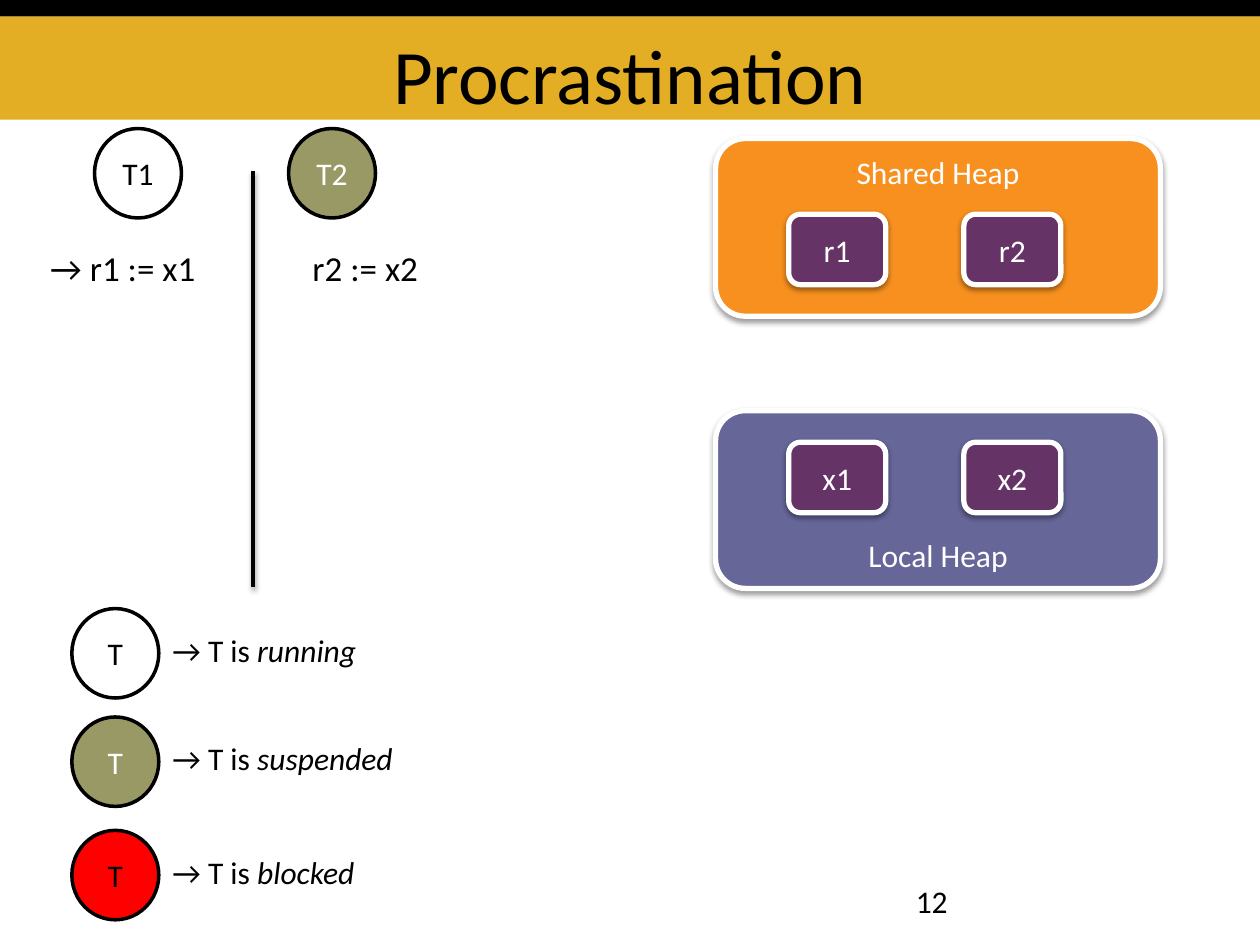
from lxml.etree import SubElement
from pptx import Presentation
from pptx.dml.color import RGBColor
from pptx.enum.shapes import MSO_CONNECTOR as Connector, MSO_SHAPE as Shape
from pptx.enum.text import MSO_ANCHOR as Anchor, PP_ALIGN as Align
from pptx.oxml.ns import qn
from pptx.util import Inches, Pt

BLACK = RGBColor(0x00, 0x00, 0x00)
WHITE = RGBColor(0xFF, 0xFF, 0xFF)
GOLD = RGBColor(0xE3, 0xAE, 0x24)
ORANGE = RGBColor(0xF7, 0x90, 0x1E)
SLATE = RGBColor(0x66, 0x66, 0x99)
PLUM = RGBColor(0x66, 0x33, 0x66)
OLIVE = RGBColor(0x99, 0x99, 0x66)
RED = RGBColor(0xFF, 0x00, 0x00)


class HeapSlide:
    font = "Calibri"
    size = 18

    def __init__(self, deck):
        self.page = deck.slides.add_slide(deck.slide_layouts[6])

    def set_effects(self, shape, shadow):
        """Replace the theme shadow; call after fill and line are set."""
        effects = SubElement(shape._element.spPr, qn("a:effectLst"))
        if shadow:
            outer = SubElement(effects, qn("a:outerShdw"), blurRad=str(Pt(3.1)),
                               dist=str(Pt(1.6)), dir="5400000", rotWithShape="0")
            color = SubElement(outer, qn("a:srgbClr"), val=str(BLACK))
            SubElement(color, qn("a:alpha"), val="38000")

    def set_text(self, shape, spans, color, size=None, align=Align.CENTER, anchor=Anchor.MIDDLE):
        """Fill the shape with (text, italic) spans as one paragraph."""
        frame = shape.text_frame
        frame.word_wrap = True
        frame.vertical_anchor = anchor
        para = frame.paragraphs[0]
        para.alignment = align
        for text, italic in spans:
            span = para.add_run()
            span.text = text
            span.font.name = self.font
            span.font.size = Pt(size or self.size)
            span.font.color.rgb = color
            if italic:
                span.font.italic = True

    def shape(self, kind, left, top, width, height, fill, line=None, weight=0, shadow=False):
        shape = self.page.shapes.add_shape(
            kind, Inches(left), Inches(top), Inches(width), Inches(height))
        shape.fill.solid()
        shape.fill.fore_color.rgb = fill
        if line is None:
            shape.line.fill.background()
        else:
            shape.line.color.rgb = line
            shape.line.width = Pt(weight)
        self.set_effects(shape, shadow)
        return shape

    def band(self, top, height, fill):
        self.shape(Shape.RECTANGLE, 0, top, 10, height, fill)

    def heap(self, top, name, fill, anchor):
        heap = self.shape(Shape.ROUNDED_RECTANGLE, 5.68, top, 3.53, 1.41, fill, WHITE, 3, True)
        self.set_text(heap, [(name, False)], WHITE, anchor=anchor)

    def cell(self, left, top, name):
        cell = self.shape(Shape.ROUNDED_RECTANGLE, left, top, 0.77, 0.56, PLUM, WHITE, 3, True)
        self.set_text(cell, [(name, False)], WHITE)

    def thread(self, left, top, name, fill, color):
        circle = self.shape(Shape.OVAL, left, top, 0.69, 0.71, fill, BLACK, 2)
        self.set_text(circle, [(name, False)], color)

    def label(self, left, top, width, height, spans, size=None,
              align=Align.LEFT, anchor=Anchor.TOP):
        box = self.page.shapes.add_textbox(
            Inches(left), Inches(top), Inches(width), Inches(height))
        self.set_text(box, spans, BLACK, size, align, anchor)
        return box

    def divider(self, x, top, bottom):
        line = self.page.shapes.add_connector(
            Connector.STRAIGHT, Inches(x), Inches(top), Inches(x), Inches(bottom))
        line.line.color.rgb = BLACK
        line.line.width = Pt(2)
        self.set_effects(line, True)


def main():
    deck = Presentation()
    deck.slide_width, deck.slide_height = Inches(10), Inches(7.5)
    slide = HeapSlide(deck)

    slide.band(0.13, 0.82, GOLD)
    slide.band(0, 0.13, BLACK)
    title = slide.label(0.5, 0.13, 9, 0.82, [("Procrastination", False)], 44,
                        Align.CENTER, Anchor.BOTTOM)
    title.text_frame.margin_bottom = 0

    heaps = [(1.1, "Shared Heap", ORANGE, Anchor.TOP, 1.7, "r"),
             (3.26, "Local Heap", SLATE, Anchor.BOTTOM, 3.51, "x")]
    for top, name, fill, anchor, cell_top, letter in heaps:
        slide.heap(top, name, fill, anchor)
        for number, left in enumerate((6.26, 7.65), 1):
            slide.cell(left, cell_top, f"{letter}{number}")

    slide.divider(2.01, 1.36, 4.66)
    slide.thread(0.75, 1.02, "T1", WHITE, BLACK)
    slide.thread(2.29, 1.02, "T2", OLIVE, WHITE)
    slide.label(0.3, 1.91, 1.71, 0.44, [("→ r1 := x1", False)], 20)
    waiting = slide.label(2.01, 1.91, 1.71, 0.44, [("r2 := x2", False)], 20)
    waiting.text_frame.margin_left = Inches(0.47)

    states = [(4.83, "running", WHITE, BLACK, 1.99),
              (5.69, "suspended", OLIVE, WHITE, 2.28),
              (6.59, "blocked", RED, BLACK, 1.99)]
    for top, state, fill, color, width in states:
        slide.thread(0.57, top, "T", fill, color)
        slide.label(1.27, top + 0.13, width, 0.4, [("→ T is ", False), (state, True)])

    slide.label(7.17, 6.95, 2.33, 0.4, [("12", False)])
    deck.save("out.pptx")


if __name__ == "__main__":
    main()
